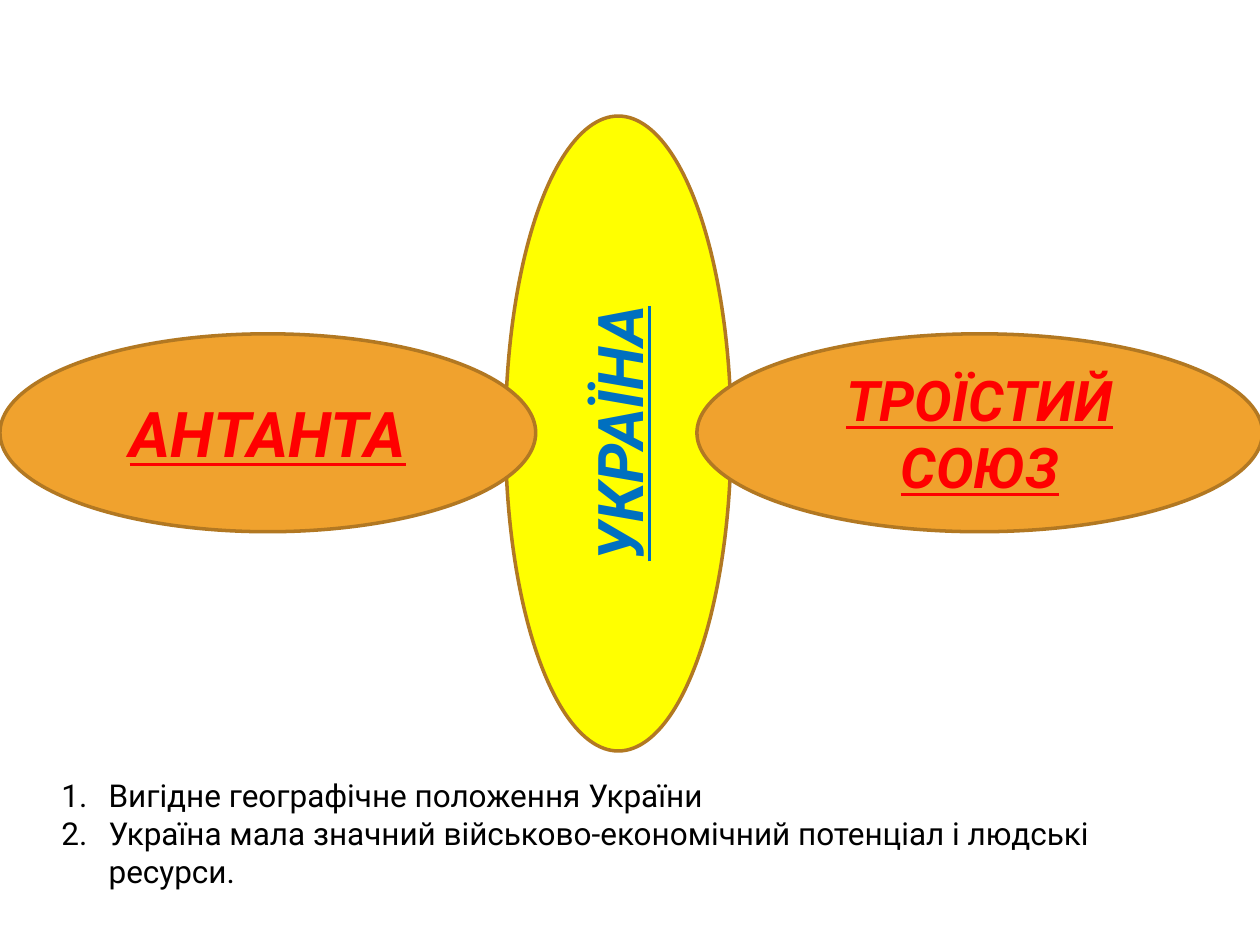
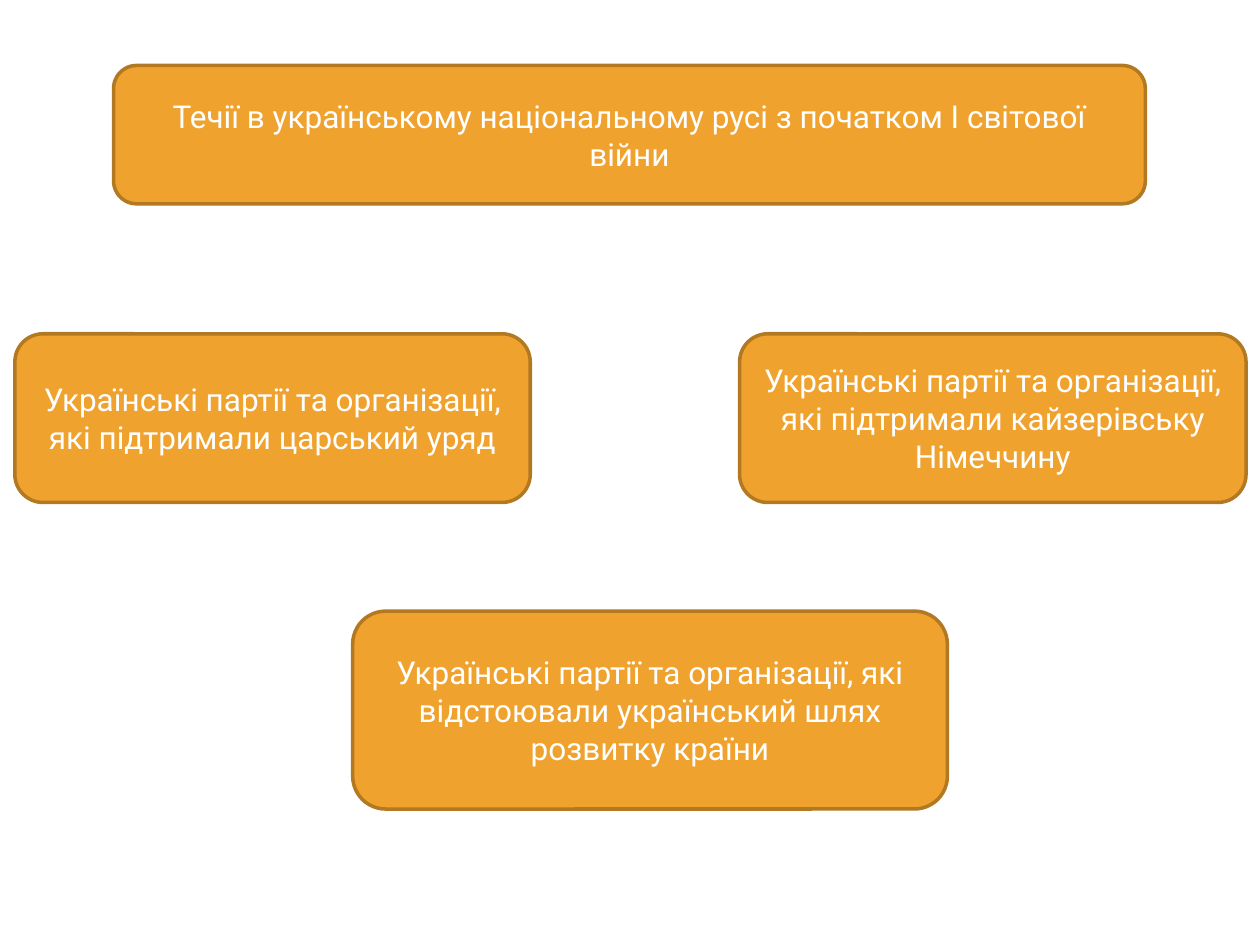
from dataclasses import dataclass

from lxml import etree
from pptx import Presentation
from pptx.dml.color import RGBColor
from pptx.enum import shapes, text
from pptx.oxml import ns
from pptx.slide import Slide
from pptx.util import Cm, Pt

ORANGE = RGBColor(0xF0, 0xA2, 0x2E)
BROWN = RGBColor(0xB2, 0x78, 0x22)
YELLOW = RGBColor(0xFF, 0xFF, 0x00)
RED = RGBColor(0xFF, 0x00, 0x00)
BLUE = RGBColor(0x00, 0x70, 0xC0)
WHITE = RGBColor(0xFF, 0xFF, 0xFF)
BLACK = RGBColor(0x00, 0x00, 0x00)
FONT = "Roboto"
BODY_SIZE = 18
MIDDLE_TOP = 6.73
LIST_INDENT = Cm(0.95)


@dataclass(frozen=True)
class Figure:
    left: float
    top: float
    width: float
    height: float
    caption: str
    outline: shapes.MSO_SHAPE = shapes.MSO_SHAPE.ROUNDED_RECTANGLE
    fill: RGBColor = ORANGE
    color: RGBColor = WHITE
    size: int = BODY_SIZE
    emphasis: bool = False
    upward: bool = False


def power(left: float, top: float, width: float, height: float, caption: str,
          size: int = 36, fill: RGBColor = ORANGE, color: RGBColor = RED,
          upward: bool = False) -> Figure:
    return Figure(left, top, width, height, caption, shapes.MSO_SHAPE.OVAL,
                  fill, color, size, True, upward)


POWERS = [
    power(10.19, 2.34, 4.55, 12.8, "УКРАЇНА", fill=YELLOW, color=BLUE, upward=True),
    power(0, MIDDLE_TOP, 10.8, 3.99, "АНТАНТА"),
    power(14.05, MIDDLE_TOP, 11.4, 3.99, "ТРОЇСТИЙ СОЮЗ", size=32),
]

REASONS = [
    "Вигідне географічне положення України",
    "Україна мала значний військово-економічний потенціал і людські ресурси.",
]

CURRENTS = [
    Figure(2.29, 1.32, 20.8, 2.79,
           "Течії в українському національному русі з початком І світової війни"),
    Figure(0.3, MIDDLE_TOP, 10.39, 3.4,
           "Українські партії та організації, які підтримали царський уряд"),
    Figure(14.91, MIDDLE_TOP, 10.21, 3.4,
           "Українські партії та організації, які підтримали кайзерівську Німеччину"),
    Figure(7.11, 12.32, 11.99, 3.99,
           "Українські партії та організації, які відстоювали український шлях розвитку країни"),
]


def draw_figure(slide: Slide, figure: Figure) -> None:
    shape = slide.shapes.add_shape(
        figure.outline, Cm(figure.left), Cm(figure.top), Cm(figure.width), Cm(figure.height))
    shape.shadow.inherit = False
    shape.fill.solid()
    shape.fill.fore_color.rgb = figure.fill
    shape.line.color.rgb = BROWN
    shape.line.width = Pt(2)

    frame = shape.text_frame
    frame.word_wrap = True
    frame.vertical_anchor = text.MSO_ANCHOR.MIDDLE
    if figure.upward:
        frame._txBody.bodyPr.set("vert", "vert270")
    caption = frame.paragraphs[0]
    caption.text = figure.caption
    caption.alignment = text.PP_ALIGN.CENTER
    font = caption.font
    font.name, font.size = FONT, Pt(figure.size)
    font.color.rgb = figure.color
    if figure.emphasis:
        font.bold = font.italic = font.underline = True


def draw_numbered_list(slide: Slide, items: list[str]) -> None:
    frame = slide.shapes.add_textbox(Cm(0.99), Cm(15.52), Cm(23.39), Cm(1.8)).text_frame
    frame.word_wrap = True
    frame.auto_size = text.MSO_AUTO_SIZE.SHAPE_TO_FIT_TEXT
    for index, item in enumerate(items):
        entry = frame.add_paragraph() if index else frame.paragraphs[0]
        entry.text = item
        properties = entry._p.get_or_add_pPr()
        properties.set("marL", str(LIST_INDENT))
        properties.set("indent", str(-LIST_INDENT))
        etree.SubElement(properties, ns.qn("a:buFont"), typeface="+mj-lt")
        etree.SubElement(properties, ns.qn("a:buAutoNum"), type="arabicPeriod")
        entry.font.name, entry.font.size = FONT, Pt(BODY_SIZE)
        entry.font.color.rgb = BLACK


def main() -> None:
    deck = Presentation()
    deck.slide_width, deck.slide_height = Cm(25.4), Cm(19.05)
    blank = deck.slide_layouts[6]
    for figures, reasons in ((POWERS, REASONS), (CURRENTS, [])):
        slide = deck.slides.add_slide(blank)
        for figure in figures:
            draw_figure(slide, figure)
        if reasons:
            draw_numbered_list(slide, reasons)
    deck.save("out.pptx")


if __name__ == "__main__":
    main()
